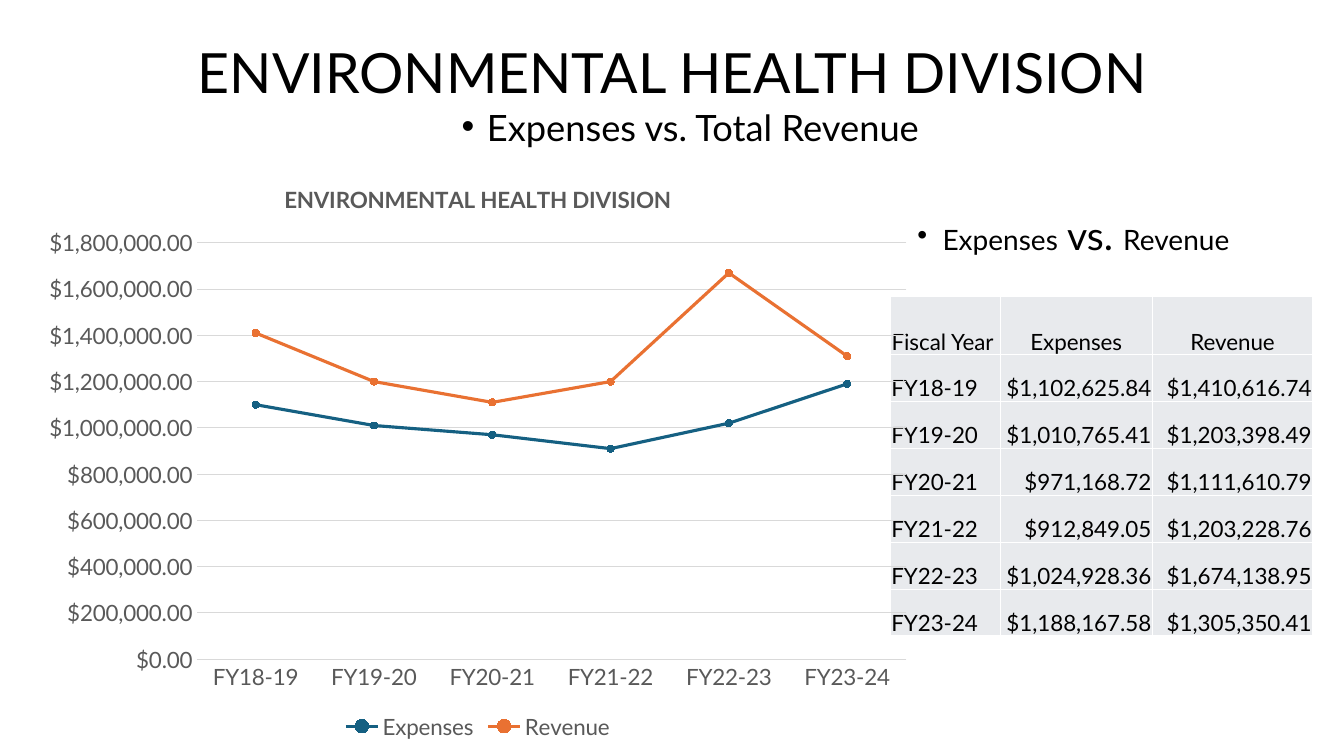
from dataclasses import dataclass

import pptx
import pptx.chart.data
import pptx.dml.color
import pptx.enum.chart
import pptx.enum.text
import pptx.oxml
import pptx.oxml.ns
import pptx.util

Inches = pptx.util.Inches
Pt = pptx.util.Pt
qn = pptx.oxml.ns.qn
Align = pptx.enum.text.PP_ALIGN
Anchor = pptx.enum.text.MSO_ANCHOR


@dataclass(frozen=True)
class Theme:
    font: str = "Lato"
    text: str = "000000"
    muted: str = "595959"
    grid: str = "D9D9D9"
    cell: str = "E8EAED"
    border: str = "FFFFFF"
    expenses: str = "156082"
    revenue: str = "E97132"
    title_size: float = 39.6
    subtitle_size: float = 25.9
    caption_size: float = 20
    versus_size: float = 28
    data_size: float = 16


@dataclass(frozen=True)
class Box:
    left: float
    top: float
    width: float
    height: float

    def lengths(self) -> list:
        return [Inches(value) for value in (self.left, self.top, self.width, self.height)]


@dataclass(frozen=True)
class TextRun:
    text: str
    size: float


@dataclass(frozen=True)
class Heading:
    box: Box
    runs: tuple
    line_spacing: float
    bulleted: bool = True


@dataclass(frozen=True)
class FiscalYear:
    name: str
    expenses: float
    revenue: float


THEME = Theme()
DIVISION = "ENVIRONMENTAL HEALTH DIVISION"
HEADINGS = (
    Heading(Box(0.92, 0.4, 11.5, 0.7), (TextRun(DIVISION, THEME.title_size),), 0.9, False),
    Heading(Box(4.48, 1.11, 5.72, 0.44),
            (TextRun("Expenses vs. Total Revenue", THEME.subtitle_size),), 0.7),
    Heading(Box(9, 2.14, 4.19, 0.51),
            (TextRun("Expenses", THEME.caption_size), TextRun(" vs. ", THEME.versus_size),
             TextRun("Revenue", THEME.caption_size)), 0.8),
)
YEARS = (
    FiscalYear("FY18-19", 1102625.84, 1410616.74),
    FiscalYear("FY19-20", 1010765.41, 1203398.49),
    FiscalYear("FY20-21", 971168.72, 1111610.79),
    FiscalYear("FY21-22", 912849.05, 1203228.76),
    FiscalYear("FY22-23", 1024928.36, 1674138.95),
    FiscalYear("FY23-24", 1188167.58, 1305350.41),
)
TABLE_BOX = Box(8.83, 2.94, 4.19, 3.37)
COLUMN_WIDTHS = (1.09, 1.51, 1.59)
HEADER_HEIGHT = 0.58
CHART_BOX = Box(0.31, 1.63, 8.86, 5.75)
PLOT_BOX = Box(1.95, 2.41, 7.04, 4.13)
CHART_TITLE_LEFT, CHART_TITLE_TOP = 2.78, 1.78


def color(value: str) -> pptx.dml.color.RGBColor:
    return pptx.dml.color.RGBColor.from_string(value)


def style_font(font, size: float, value: str, bold: bool = False) -> None:
    font.name = THEME.font
    font.size = Pt(size)
    font.bold = bold
    font.color.rgb = color(value)


def add_run(paragraph, text: str, size: float, value: str = THEME.text, bold: bool = False) -> None:
    run = paragraph.add_run()
    run.text = text
    style_font(run.font, size, value, bold)


def element(tag: str, content: str = "", attributes: str = ""):
    namespaces = pptx.oxml.ns.nsdecls("a", "c")
    return pptx.oxml.parse_xml(f"<{tag} {namespaces} {attributes}>{content}</{tag}>")


def add_bullet(paragraph) -> None:
    properties = paragraph._p.get_or_add_pPr()
    properties.set("marL", str(Inches(0.25)))
    properties.set("indent", str(-Inches(0.25)))
    properties.append(element("a:buFont", attributes='typeface="Arial"'))
    properties.append(element("a:buChar", attributes='char="•"'))


def add_heading(slide, heading: Heading) -> None:
    shape = slide.shapes.add_textbox(*heading.box.lengths())
    frame = shape.text_frame
    frame.word_wrap = True
    paragraph = frame.paragraphs[0]
    paragraph.line_spacing = heading.line_spacing
    if heading.bulleted:
        add_bullet(paragraph)
    else:
        frame.vertical_anchor = Anchor.MIDDLE
        paragraph.alignment = Align.CENTER
    for run in heading.runs:
        add_run(paragraph, run.text, run.size)


def fill_cell(cell, text: str, alignment: Align) -> None:
    cell.margin_left = cell.margin_right = cell.margin_top = Inches(0.01)
    cell.margin_bottom = 0
    cell.vertical_anchor = Anchor.BOTTOM
    cell.fill.solid()
    cell.fill.fore_color.rgb = color(THEME.cell)
    paragraph = cell.text_frame.paragraphs[0]
    paragraph.alignment = alignment
    add_run(paragraph, text, THEME.data_size)


def add_year_table(slide) -> None:
    rows = [("Fiscal Year ", "Expenses", "Revenue")]
    rows += [(year.name, f"${year.expenses:,.2f}", f"${year.revenue:,.2f}") for year in YEARS]
    frame = slide.shapes.add_table(len(rows), len(COLUMN_WIDTHS), *TABLE_BOX.lengths())
    table = frame.table
    table.first_row = table.horz_banding = False
    for column, width in zip(table.columns, COLUMN_WIDTHS):
        column.width = Inches(width)
    year_height = (TABLE_BOX.height - HEADER_HEIGHT) / len(YEARS)
    for row_index, texts in enumerate(rows):
        table.rows[row_index].height = Inches(year_height if row_index else HEADER_HEIGHT)
        alignments = (Align.LEFT, Align.RIGHT, Align.RIGHT) if row_index else (Align.CENTER,) * 3
        for column_index, (text, alignment) in enumerate(zip(texts, alignments)):
            fill_cell(table.cell(row_index, column_index), text, alignment)
    border_fill = f'<a:solidFill><a:srgbClr val="{THEME.border}"/></a:solidFill>'
    for properties in frame.element.iter(qn("a:tcPr")):
        for index, side in enumerate("LRTB"):
            properties.insert(index, element(f"a:ln{side}", border_fill, f'w="{Pt(1)}"'))


def place(parent, index: int, left: float, top: float, **settings) -> None:
    settings |= {"xMode": "edge", "yMode": "edge",
                 "x": (left - CHART_BOX.left) / CHART_BOX.width,
                 "y": (top - CHART_BOX.top) / CHART_BOX.height}
    order = ("layoutTarget", "xMode", "yMode", "x", "y", "w", "h")
    content = "".join(f'<c:{name} val="{settings[name]}"/>' for name in order if name in settings)
    for old_layout in parent.findall(qn("c:layout")):
        parent.remove(old_layout)
    parent.insert(index, element("c:layout", f"<c:manualLayout>{content}</c:manualLayout>"))


def style_axis(axis) -> None:
    axis.major_tick_mark = axis.minor_tick_mark = pptx.enum.chart.XL_TICK_MARK.NONE
    style_font(axis.tick_labels.font, THEME.data_size, THEME.muted)


def style_line(line, value: str, width: float) -> None:
    line.color.rgb = color(value)
    line.width = Pt(width)


def style_series(series, value: str) -> None:
    series.smooth = False
    style_line(series.format.line, value, 2.25)
    marker = series.marker
    marker.style = pptx.enum.chart.XL_MARKER_STYLE.CIRCLE
    marker.size = 5
    marker.format.fill.solid()
    marker.format.fill.fore_color.rgb = color(value)
    style_line(marker.format.line, value, 0.75)


def add_trend_chart(slide) -> None:
    data = pptx.chart.data.CategoryChartData()
    data.categories = [year.name for year in YEARS]
    data.add_series("Expenses", [round(year.expenses, -4) for year in YEARS])
    data.add_series("Revenue", [round(year.revenue, -4) for year in YEARS])
    chart = slide.shapes.add_chart(
        pptx.enum.chart.XL_CHART_TYPE.LINE_MARKERS, *CHART_BOX.lengths(), data).chart
    style_font(chart.font, 10, THEME.text)
    chart.has_title = True
    title_paragraph = chart.chart_title.text_frame.paragraphs[0]
    add_run(title_paragraph, DIVISION, THEME.data_size, THEME.muted, True)
    chart.has_legend = True
    chart.legend.position = pptx.enum.chart.XL_LEGEND_POSITION.BOTTOM
    chart.legend.include_in_layout = False
    style_font(chart.legend.font, THEME.data_size, THEME.muted)
    chart.plots[0].vary_by_categories = False
    for series, value in zip(chart.plots[0].series, (THEME.expenses, THEME.revenue)):
        style_series(series, value)
    style_axis(chart.category_axis)
    style_line(chart.category_axis.format.line, THEME.grid, 0.75)
    value_axis = chart.value_axis
    style_axis(value_axis)
    value_axis.minimum_scale, value_axis.maximum_scale = 0, 1800000
    value_axis.major_unit = 200000
    value_axis.format.line.fill.background()
    style_line(value_axis.major_gridlines.format.line, THEME.grid, 0.75)
    value_axis.tick_labels.number_format = '"$"#,##0.00'
    value_axis.tick_labels.number_format_is_linked = False
    chart_body = chart.element.find(qn("c:chart"))
    place(chart_body.find(qn("c:title")), 1, CHART_TITLE_LEFT, CHART_TITLE_TOP)
    plot_area = chart_body.find(qn("c:plotArea"))
    place(plot_area, 0, PLOT_BOX.left, PLOT_BOX.top, layoutTarget="inner",
          w=PLOT_BOX.width / CHART_BOX.width, h=PLOT_BOX.height / CHART_BOX.height)
    plot_area.append(element("c:spPr", "<a:noFill/>"))
    chart_body.addnext(element("c:spPr", "<a:noFill/><a:ln><a:noFill/></a:ln>"))


def main() -> None:
    presentation = pptx.Presentation()
    presentation.slide_width = Inches(13.33)
    presentation.slide_height = Inches(7.5)
    slide = presentation.slides.add_slide(presentation.slide_layouts[6])
    for heading in HEADINGS:
        add_heading(slide, heading)
    add_year_table(slide)
    add_trend_chart(slide)
    presentation.save("out.pptx")


if __name__ == "__main__":
    main()
